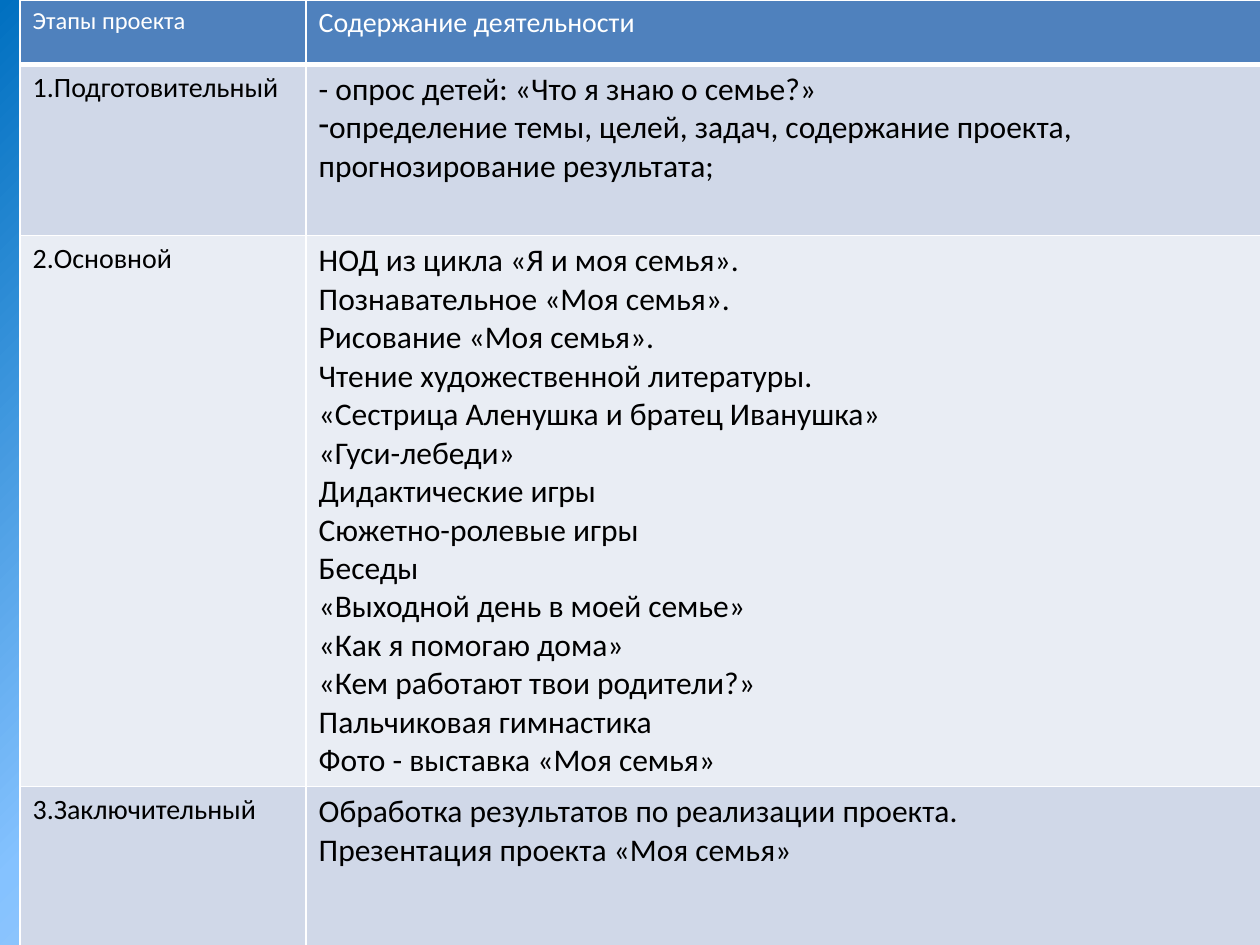
import pptx
import pptx.dml.color
import pptx.oxml
import pptx.oxml.ns
import pptx.util


def color(value):
    return pptx.dml.color.RGBColor.from_string(value)


def add_xml(parent, tag, **attributes):
    child = pptx.oxml.parse_xml(f"<{tag} {pptx.oxml.ns.nsdecls('a')}/>")
    for key, value in attributes.items():
        child.set(key, str(value))
    parent.append(child)
    return child


class SlideStyle:
    font = "Calibri"
    dash = "- "
    border = "FFFFFF"

    def __init__(self, deck):
        self.width, self.height = deck.slide_width, deck.slide_height
        self.slide = deck.slides.add_slide(deck.slide_layouts[6])

    def across(self, share):
        return round(self.width * share)

    def down(self, share):
        return round(self.height * share)

    def background(self, stops, angle):
        fill = self.slide.background.fill
        fill.gradient()
        fill.gradient_angle = 360 - angle
        stop_list = self.slide.element.find(".//" + pptx.oxml.ns.qn("a:gsLst"))
        for old_stop in list(stop_list):
            stop_list.remove(old_stop)
        for percent, shade in stops:
            stop = add_xml(stop_list, "a:gs", pos=percent * 1000)
            add_xml(stop, "a:srgbClr", val=shade)

    def borders(self, cell, widths):
        properties = cell._tc.get_or_add_tcPr()
        for side, points in zip("LRTB", widths):
            line = add_xml(properties, f"a:ln{side}", w=pptx.util.Pt(points))
            add_xml(add_xml(line, "a:solidFill"), "a:srgbClr", val=self.border)

    def line_of_text(self, paragraph, text, size, ink, bulleted):
        if bulleted:
            properties = paragraph._p.get_or_add_pPr()
            properties.set("marL", "0")
            properties.set("indent", "0")
            add_xml(properties, "a:buChar", char="-")
        run = paragraph.add_run()
        run.text = text
        look = {"name": self.font, "size": pptx.util.Pt(size), "bold": False}
        for key, value in look.items():
            setattr(run.font, key, value)
        run.font.color.rgb = color(ink)

    def cell(self, cell, lines, size, ink, fill, widths):
        self.borders(cell, widths)
        cell.fill.solid()
        cell.fill.fore_color.rgb = color(fill)
        frame = cell.text_frame
        for index, line in enumerate(lines):
            paragraph = frame.add_paragraph() if index else frame.paragraphs[0]
            bulleted = line.startswith("-") and not line.startswith(self.dash)
            text = line[1:] if bulleted else line
            self.line_of_text(paragraph, text, size, ink, bulleted)

    def table(self, left, columns, rows, content, looks):
        table = self.slide.shapes.add_table(
            len(rows), len(columns), self.across(left), 0,
            self.across(sum(columns)), self.down(sum(rows))).table
        for column, share in zip(table.columns, columns):
            column.width = self.across(share)
        for row, share in zip(table.rows, rows):
            row.height = self.down(share)
        for row, texts, look in zip(table.rows, content, looks):
            for cell, lines, size in zip(row.cells, texts, look["sizes"]):
                self.cell(cell, lines, size, look["ink"], look["fill"], look["widths"])


def main():
    deck = pptx.Presentation()
    deck.slide_width = pptx.util.Inches(10)
    deck.slide_height = pptx.util.Inches(7.5)
    page = SlideStyle(deck)
    page.background([(0, "0070C0"), (40, "85C2FF"), (70, "C4D6EB"), (100, "FFEBFA")], 45)

    stages = [
        (["Этапы проекта"], ["Содержание деятельности"]),
        (["1.Подготовительный"], [
            "- опрос детей: «Что я знаю о семье?»",
            "-определение темы, целей, задач, содержание проекта, прогнозирование результата;",
        ]),
        (["2.Основной"], [
            "НОД из цикла «Я и моя семья».",
            "Познавательное «Моя семья».",
            "Рисование «Моя семья».",
            "Чтение художественной литературы.",
            "«Сестрица Аленушка и братец Иванушка»",
            "«Гуси-лебеди»",
            "Дидактические игры",
            "Сюжетно-ролевые игры",
            "Беседы",
            "«Выходной день в моей семье»",
            "«Как я помогаю дома»",
            "«Кем работают твои родители?»",
            "Пальчиковая гимнастика",
            "Фото - выставка «Моя семья»",
        ]),
        (["3.Заключительный"], [
            "Обработка результатов по реализации проекта.",
            "Презентация проекта «Моя семья»",
        ]),
    ]
    heading = {"sizes": (14, 16), "ink": "FFFFFF", "fill": "4F81BD", "widths": (1, 1, 1, 3)}
    dark_band = {"sizes": (16, 18), "ink": "000000", "fill": "D0D8E8", "widths": (1, 1, 1, 1)}
    light_band = {**dark_band, "fill": "E9EDF4"}
    heights = [inches / 7.5 for inches in (0.51, 1.36, 4.19, 1.45)]
    page.table(0.016, (0.227, 0.758), heights, stages,
               (heading, dark_band, light_band, dark_band))
    deck.save("out.pptx")


if __name__ == "__main__":
    main()
